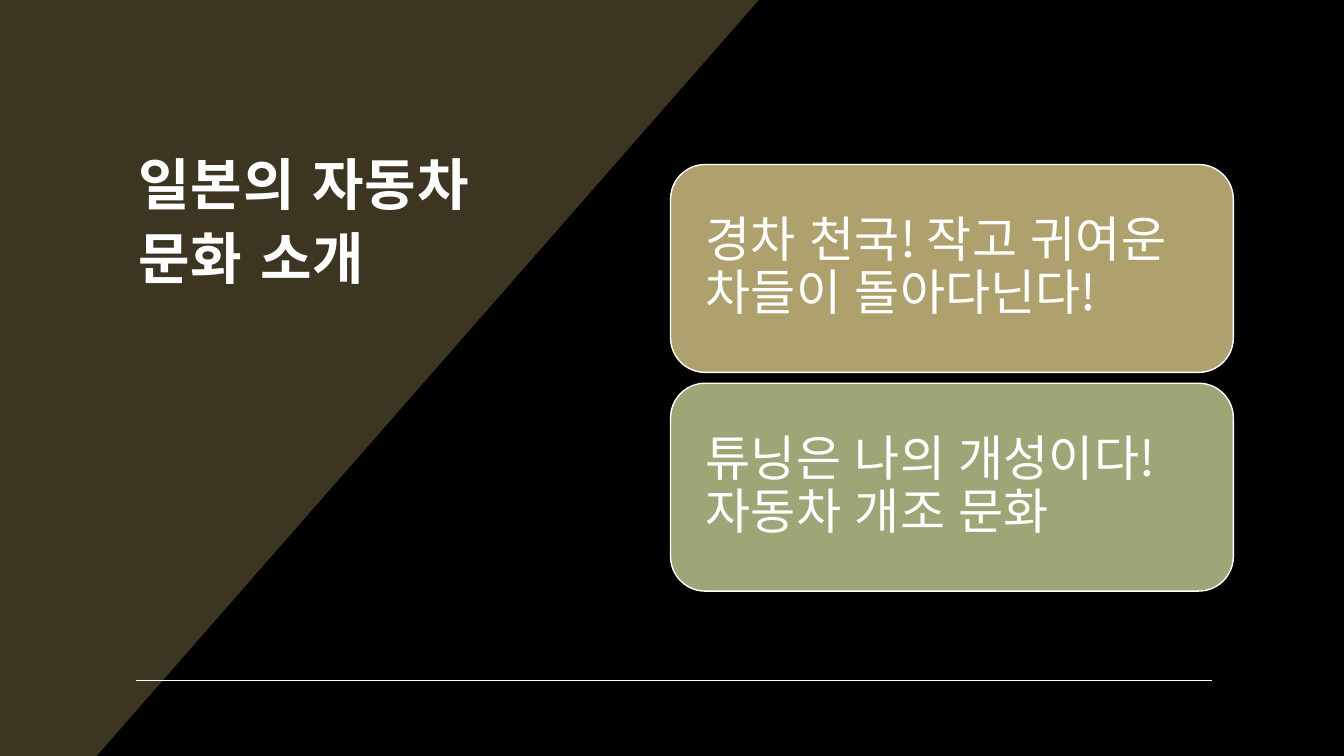
from lxml.etree import SubElement
from pptx import Presentation
from pptx.dml.color import RGBColor
from pptx.enum.shapes import MSO_CONNECTOR as Connector, MSO_SHAPE as Shape
from pptx.enum.text import MSO_ANCHOR as Anchor, PP_ALIGN as Align
from pptx.oxml.ns import qn
from pptx.util import Pt

FONT = "Noto Sans CJK KR"
WHITE = "FFFFFF"


def color(hex_code):
    return RGBColor.from_string(hex_code)


def write(shape, text, size, bold=False, spacing=1.0, after=0, tracking=0,
          anchor=Anchor.TOP, insets=(9, 9, 9, 7)):
    frame = shape.text_frame
    frame.word_wrap = True
    frame.vertical_anchor = anchor
    (frame.margin_left, frame.margin_top,
     frame.margin_right, frame.margin_bottom) = map(Pt, insets)
    paragraph = frame.paragraphs[0]
    paragraph.alignment = Align.LEFT
    paragraph.line_spacing = spacing
    paragraph.space_before, paragraph.space_after = Pt(0), Pt(after)
    run = paragraph.add_run()
    run.text = text
    run.font.name, run.font.size, run.font.bold = FONT, Pt(size), bold
    run.font.color.rgb = color(WHITE)
    properties = run.font._element
    properties.set("lang", "ko-KR")
    properties.set("spc", str(tracking))
    SubElement(properties, qn("a:ea")).set("typeface", FONT)


prs = Presentation()
prs.slide_width, prs.slide_height = Pt(960), Pt(540)
slide = prs.slides.add_slide(prs.slide_layouts[5])
slide.background.fill.solid()
slide.background.fill.fore_color.rgb = color("000000")

# Slanted panel, placed behind the title
outline = slide.shapes.build_freeform(Pt(0), Pt(0))
outline.add_line_segments(
    [(Pt(542), Pt(0)), (Pt(69), Pt(540)), (Pt(0), Pt(540))], close=True)
panel = outline.convert_to_shape()
panel.shadow.inherit = False
panel.fill.solid()
panel.fill.fore_color.rgb = color("3B3521")
panel.line.fill.background()

# Title
title = slide.shapes.title
title.left, title.top, title.width, title.height = map(Pt, (90, 93, 278, 123))
panel._element.getparent().append(title._element)
write(title, "일본의 자동차 문화 소개", 40, bold=True, spacing=1.1, tracking=70)

# Rule along the bottom
rule = slide.shapes.add_connector(
    Connector.STRAIGHT, Pt(97), Pt(486), Pt(865.5), Pt(486))
rule.line.color.rgb = color(WHITE)
rule.line.width = Pt(1)
SubElement(rule._element.spPr, qn("a:effectLst"))

# Topic cards
topics = [
    ("경차 천국! 작고 귀여운 차들이 돌아다닌다!", "AFA16E"),
    ("튜닝은 나의 개성이다! 자동차 개조 문화", "9CA676"),
]
for row, (topic, tint) in enumerate(topics):
    card = slide.shapes.add_shape(
        Shape.ROUNDED_RECTANGLE, Pt(479), Pt(117.5 + 156.2 * row), Pt(402), Pt(148.5))
    card.shadow.inherit = False
    card.fill.solid()
    card.fill.fore_color.rgb = color(tint)
    card.line.color.rgb = color(WHITE)
    card.line.width = Pt(1)
    write(card, topic, 35, spacing=0.9, after=12, anchor=Anchor.MIDDLE,
          insets=(18, 18, 18, 18))

prs.save("out.pptx")
